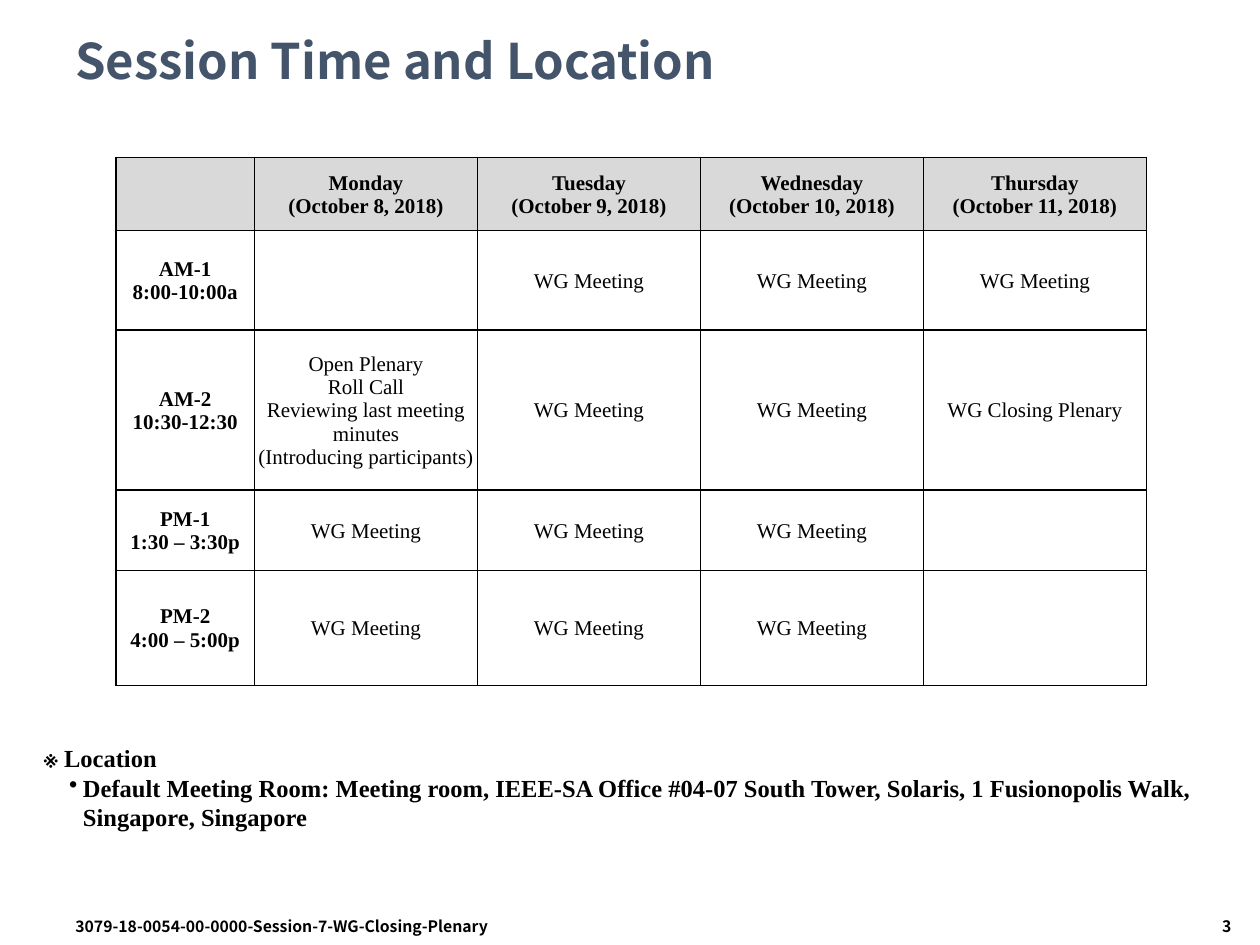
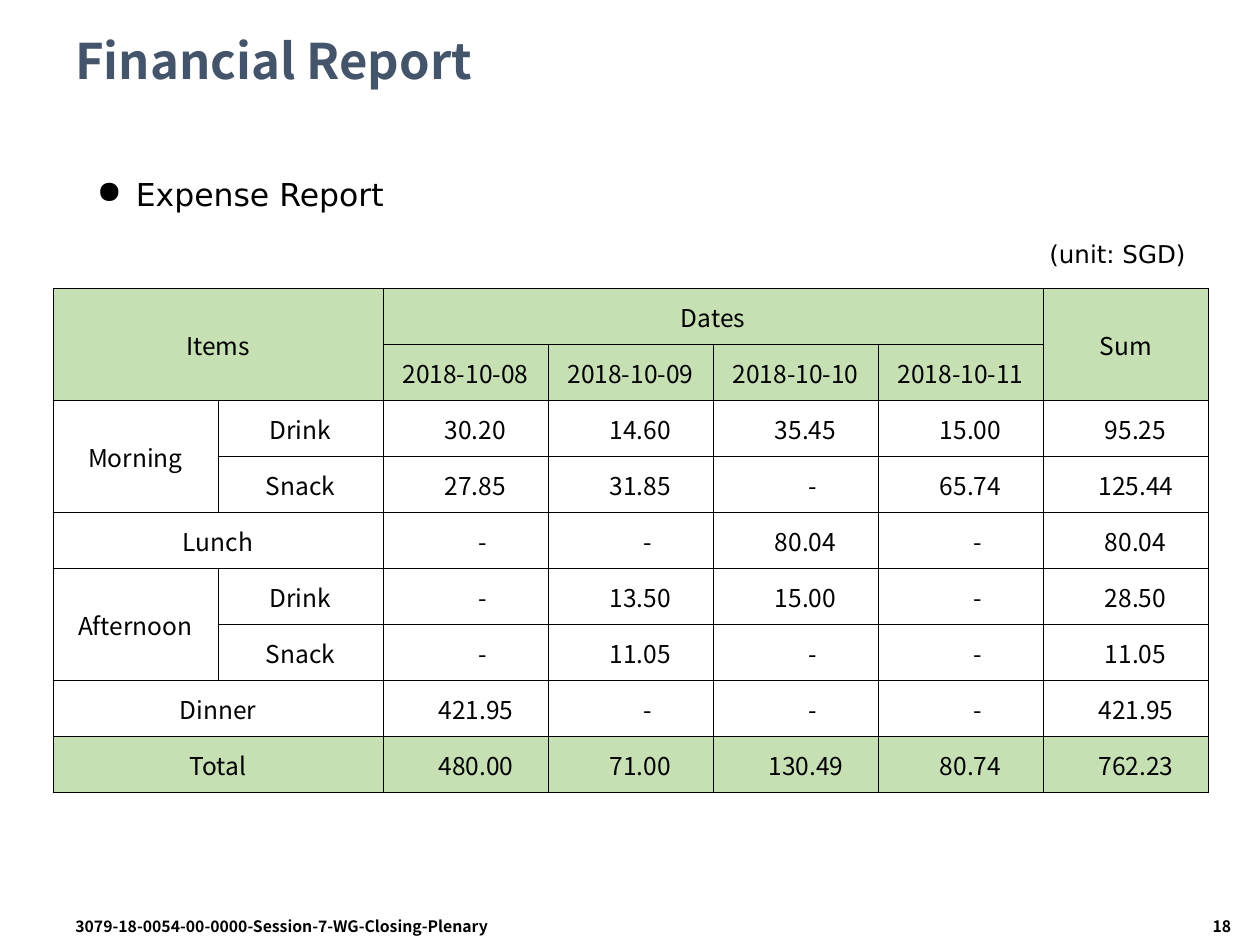
from lxml import etree
from pptx import Presentation
from pptx.dml.color import RGBColor
from pptx.enum.text import MSO_ANCHOR, PP_ALIGN
from pptx.oxml.ns import qn
from pptx.util import Inches, Pt

LEFT, CENTER, RIGHT = PP_ALIGN.LEFT, PP_ALIGN.CENTER, PP_ALIGN.RIGHT
MIDDLE, TOP = MSO_ANCHOR.MIDDLE, MSO_ANCHOR.TOP

SANS, SERIF, PLAIN = "Noto Sans CJK KR", "Times New Roman", "DejaVu Sans"
BLACK, TITLE_BLUE, HEAD_GRAY, HEAD_GREEN = "000000", "44546A", "D9D9D9", "C6E0B4"
FOOTER = "3079-18-0054-00-0000-Session-7-WG-Closing-Plenary"

WG = "WG Meeting"
SESSIONS = [
    ["", "Monday\n(October 8, 2018)", "Tuesday\n(October 9, 2018)",
     "Wednesday\n(October 10, 2018)", "Thursday\n(October 11, 2018)"],
    ["AM-1\n8:00-10:00a", "", WG, WG, WG],
    ["AM-2\n10:30-12:30",
     "Open Plenary\nRoll Call\nReviewing last meeting minutes\n(Introducing participants)",
     WG, WG, "WG Closing Plenary"],
    ["PM-1\n1:30 – 3:30p", WG, WG, WG, ""],
    ["PM-2\n4:00 – 5:00p", WG, WG, WG, ""],
]
SESSION_COLS = [1.1] + [1.77] * 4
SESSION_ROWS = [0.58, 0.79, 1.27, 0.64, 0.91]

EXPENSES = [
    ["Items", "", "Dates", "", "", "", "Sum"],
    ["", "", "2018-10-08", "2018-10-09", "2018-10-10", "2018-10-11", ""],
    ["Morning", "Drink", "30.20", "14.60", "35.45", "15.00", "95.25"],
    ["", "Snack", "27.85", "31.85", "-", "65.74", "125.44"],
    ["Lunch", "", "-", "-", "80.04", "-", "80.04"],
    ["Afternoon", "Drink", "-", "13.50", "15.00", "-", "28.50"],
    ["", "Snack", "-", "11.05", "-", "-", "11.05"],
    ["Dinner", "", "421.95", "-", "-", "-", "421.95"],
    ["Total", "", "480.00", "71.00", "130.49", "80.74", "762.23"],
]
EXPENSE_MERGES = [(0, 0, 1, 1), (0, 2, 0, 5), (0, 6, 1, 6), (2, 0, 3, 0),
                  (4, 0, 4, 1), (5, 0, 6, 0), (7, 0, 7, 1), (8, 0, 8, 1)]
AMOUNT_INDENT = {1: 0.76, 5: 0.49, 6: 0.44}


def rgb(color):
    """Turn a hex string into a colour."""
    return RGBColor.from_string(color)


def write(p, text, size=14, font=SANS, color=BLACK, bold=False, align=LEFT,
          spacing=None, bullet=None, margin=0, hang=0):
    """Put one formatted run of text into a paragraph."""
    if bullet:
        pPr = p._p.get_or_add_pPr()
        pPr.set("marL", str(Inches(margin)))
        pPr.set("indent", str(-Inches(hang)))
        etree.SubElement(pPr, qn("a:buChar")).set("char", bullet)
    p.alignment = align
    if spacing:
        p.line_spacing = spacing
    r = p.add_run()
    r.text = text
    r.font.size, r.font.name, r.font.bold = Pt(size), font, bold
    r.font.color.rgb = rgb(color)


def add_text(slide, box, text, anchor=TOP, **fmt):
    """Add a text box holding one paragraph and return its frame."""
    tf = slide.shapes.add_textbox(*map(Inches, box)).text_frame
    tf.word_wrap = True
    tf.vertical_anchor = anchor
    write(tf.paragraphs[0], text, **fmt)
    return tf


def set_borders(cell, width):
    """Draw black lines on all four sides of a cell."""
    tcPr = cell._tc.get_or_add_tcPr()
    for i, side in enumerate(("a:lnL", "a:lnR", "a:lnT", "a:lnB")):
        ln = etree.Element(qn(side), w=str(Pt(width)))
        fill = etree.SubElement(ln, qn("a:solidFill"))
        etree.SubElement(fill, qn("a:srgbClr"), val=BLACK)
        tcPr.insert(i, ln)


def add_grid(slide, left, top, cols, rows, border):
    """Add an unstyled, bordered table of the given column and row sizes."""
    frame = slide.shapes.add_table(len(rows), len(cols), Inches(left), Inches(top),
                                   Inches(sum(cols)), Inches(sum(rows)))
    table = frame.table
    table.first_row = table.horz_banding = False
    for col, width in zip(table.columns, cols):
        col.width = Inches(width)
    for row, height in zip(table.rows, rows):
        row.height = Inches(height)
    for cell in table.iter_cells():
        cell.fill.background()
        set_borders(cell, border)
    return table


def fill_cell(cell, text, fill=None, indent=0.01, **fmt):
    """Write the lines of a cell and colour it."""
    cell.margin_left, cell.margin_right = Inches(indent), Inches(0.01)
    cell.margin_top, cell.margin_bottom = Inches(0.01), 0
    cell.vertical_anchor = MIDDLE
    if fill:
        cell.fill.solid()
        cell.fill.fore_color.rgb = rgb(fill)
    if not text:
        return
    tf = cell.text_frame
    for i, line in enumerate(text.split("\n")):
        write(tf.add_paragraph() if i else tf.paragraphs[0], line, **fmt)


def add_base(prs, title, number):
    """Add a slide with the shared title, footer and page number."""
    slide = prs.slides.add_slide(prs.slide_layouts[6])
    add_text(slide, (0.5, 0.17, 9, 0.67), title, anchor=MIDDLE, size=28,
             color=TITLE_BLUE, bold=True, spacing=0.9)
    add_text(slide, (0.5, 7.23, 4.42, 0.27), FOOTER, size=9, bold=True)
    add_text(slide, (8.25, 7.23, 1.62, 0.27), str(number), size=9, bold=True, align=RIGHT)
    return slide


def add_timetable(slide, left, top):
    """Add the session timetable with bold day and time headings."""
    table = add_grid(slide, left, top, SESSION_COLS, SESSION_ROWS, 1)
    for i, row in enumerate(SESSIONS):
        for j, text in enumerate(row):
            fill_cell(table.cell(i, j), text, fill=None if i else HEAD_GRAY, size=12,
                      font=SERIF, bold=i == 0 or j == 0, align=CENTER)


def add_location(slide, box):
    """Add the note on the meeting place."""
    tf = add_text(slide, box, "※ Location", font=SERIF, bold=True)
    write(tf.add_paragraph(),
          "Default Meeting Room: Meeting room, IEEE-SA Office #04-07 South Tower, "
          "Solaris, 1 Fusionopolis Walk, Singapore, Singapore",
          font=SERIF, bold=True, bullet="•", margin=0.31, hang=0.11)


def add_expenses(slide, left, top, width, height):
    """Add the expense table with merged headings and indented amounts."""
    n_rows, n_cols = len(EXPENSES), len(EXPENSES[0])
    table = add_grid(slide, left, top, [width / n_cols] * n_cols,
                     [height / n_rows] * n_rows, 0.5)
    for top_row, first, bottom_row, last in EXPENSE_MERGES:
        table.cell(top_row, first).merge(table.cell(bottom_row, last))
    for i, row in enumerate(EXPENSES):
        fill = HEAD_GREEN if i in (0, 1, n_rows - 1) else None
        for j, text in enumerate(row):
            amount = i > 1 and j > 1
            fill_cell(table.cell(i, j), text, fill=fill,
                      indent=AMOUNT_INDENT[len(text)] if amount else 0.01,
                      align=LEFT if amount else CENTER)


def build_session_slide(prs):
    """Build the slide on session time and location."""
    slide = add_base(prs, "Session Time and Location", 3)
    add_location(slide, (0.25, 5.85, 9.62, 0.81))
    add_timetable(slide, 0.92, 1.25)


def build_finance_slide(prs):
    """Build the slide with the expense report."""
    slide = add_base(prs, "Financial Report", 18)
    add_text(slide, (0.67, 1.34, 3, 0.4), "Expense Report", size=18, font=PLAIN,
             bullet="●", margin=0.31, hang=0.31)
    add_text(slide, (8.23, 1.85, 1.36, 0.34), "(unit: SGD)", font=PLAIN)
    add_expenses(slide, 0.42, 2.29, 9.17, 4)


def main():
    """Build and save the presentation."""
    prs = Presentation()
    prs.slide_width, prs.slide_height = Inches(10), Inches(7.5)
    build_session_slide(prs)
    build_finance_slide(prs)
    prs.save("out.pptx")


if __name__ == "__main__":
    main()
